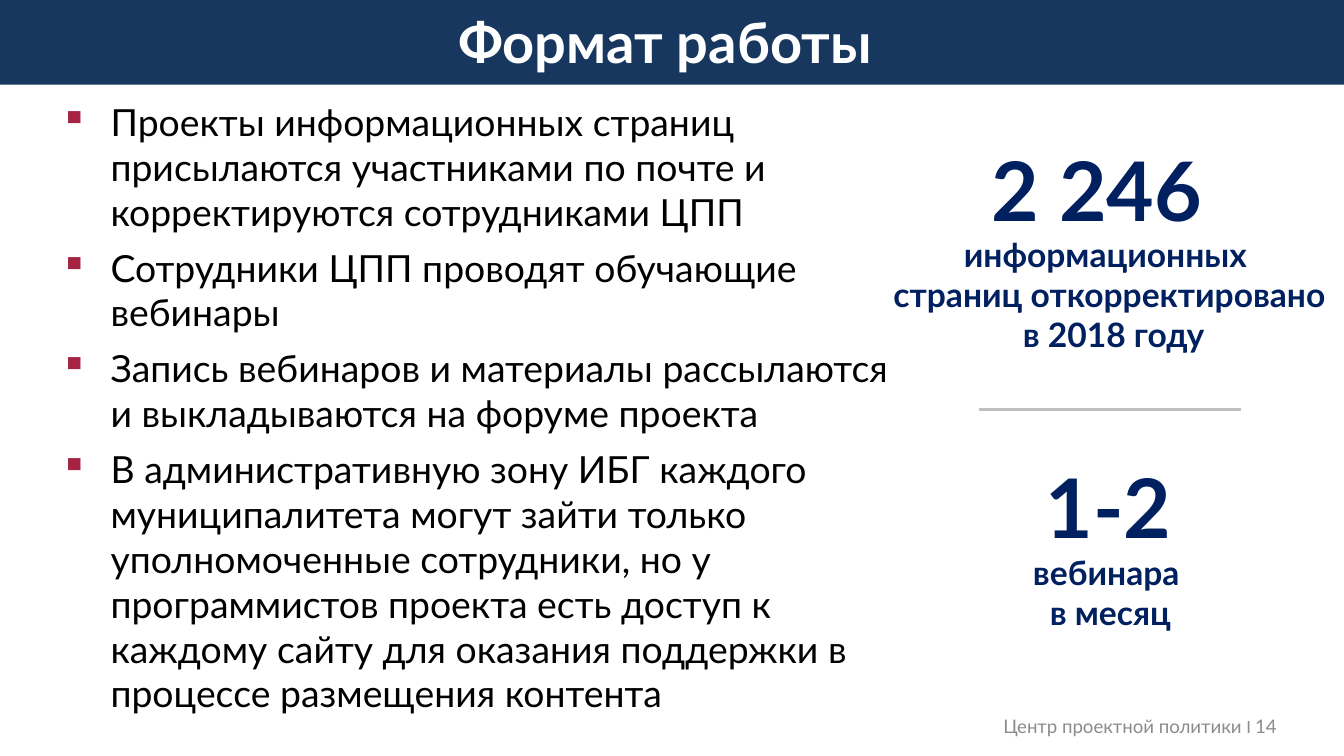
from dataclasses import dataclass

from lxml import etree
from pptx import Presentation
from pptx import util as u
from pptx.dml.color import RGBColor
from pptx.enum import shapes, text
from pptx.oxml import ns

WHITE = RGBColor(0xFF, 0xFF, 0xFF)
BLACK = RGBColor(0, 0, 0)
BANNER_BLUE = RGBColor(0x17, 0x37, 0x5E)
FIGURE_BLUE = RGBColor(0x00, 0x20, 0x60)
BULLET_RED = RGBColor(0xA6, 0x23, 0x41)
FOOTER_GRAY = RGBColor(0x8C, 0x8C, 0x8C)
DIVIDER_GRAY = RGBColor(0xBF, 0xBF, 0xBF)

CENTER = text.PP_ALIGN.CENTER
MIDDLE = text.MSO_ANCHOR.MIDDLE


@dataclass(frozen=True)
class Box:
    left: float
    top: float
    width: float
    height: float

    def lengths(self) -> tuple:
        return tuple(u.Cm(x) for x in (self.left, self.top, self.width, self.height))


@dataclass(frozen=True)
class Statistic:
    figure: str
    figure_box: Box
    caption: tuple[str, ...]
    caption_box: Box


BULLETS = (
    "Проекты информационных страниц присылаются участниками по почте и корректируются сотрудниками ЦПП",
    "Сотрудники ЦПП проводят обучающие вебинары",
    "Запись вебинаров и материалы рассылаются и выкладываются на форуме проекта",
    "В административную зону ИБГ каждого муниципалитета могут зайти только "
    "уполномоченные сотрудники, но у программистов проекта есть доступ к каждому "
    "сайту для оказания поддержки в процессе размещения контента",
)

STATISTICS = (
    Statistic(
        "2 246",
        Box(18.49, 2.51, 4.98, 2.13),
        ("информационных ", "страниц откорректировано", " в 2018 году"),
        Box(16.41, 4.29, 9.12, 2.57),
    ),
    Statistic(
        "1-2",
        Box(19.51, 8.51, 2.95, 2.13),
        ("вебинара ", "в месяц"),
        Box(19.13, 10.31, 3.71, 1.8),
    ),
)


def add_run(paragraph, content: str, *, size: float, color: RGBColor,
            bold: bool = False, font: str = "Lato"):
    run = paragraph.add_run()
    run.text = content
    run.font.name = font
    run.font.size = u.Pt(size)
    run.font.bold = bold
    run.font.color.rgb = color


def write_lines(frame, lines: tuple[str, ...], *, align=None, **style):
    for index, line in enumerate(lines):
        paragraph = frame.paragraphs[0] if index == 0 else frame.add_paragraph()
        paragraph.alignment = align
        add_run(paragraph, line, **style)


def add_text_frame(slide, box: Box, *, wrap: bool = True):
    frame = slide.shapes.add_textbox(*box.lengths()).text_frame
    frame.word_wrap = wrap
    if not wrap:
        frame.auto_size = text.MSO_AUTO_SIZE.SHAPE_TO_FIT_TEXT
    return frame


def add_banner(slide, title: str):
    shape = slide.shapes.add_shape(
        shapes.MSO_SHAPE.RECTANGLE, *Box(0, -0.05, 25.4, 1.65).lengths())
    shape.shadow.inherit = False
    shape.fill.solid()
    shape.fill.fore_color.rgb = BANNER_BLUE
    shape.line.fill.background()
    shape.text_frame.vertical_anchor = MIDDLE
    write_lines(shape.text_frame, (title,), align=CENTER, size=30, color=WHITE, bold=True)


def add_bullet(paragraph):
    paragraph.space_before = u.Pt(6)
    properties = paragraph._p.get_or_add_pPr()
    indent = u.Cm(0.95)
    properties.set("marL", str(indent))
    properties.set("indent", str(-indent))
    color = etree.SubElement(properties, ns.qn("a:buClr"))
    etree.SubElement(color, ns.qn("a:srgbClr"), val=str(BULLET_RED))
    etree.SubElement(properties, ns.qn("a:buChar"), char="▪")


def add_bullet_list(slide):
    frame = add_text_frame(slide, Box(0.89, 1.75, 16.48, 11.25))
    write_lines(frame, BULLETS, size=20, color=BLACK)
    for paragraph in frame.paragraphs:
        add_bullet(paragraph)


def add_statistic(slide, statistic: Statistic):
    figure = add_text_frame(slide, statistic.figure_box, wrap=False)
    write_lines(figure, (statistic.figure,), size=44, color=FIGURE_BLUE, bold=True)
    caption = add_text_frame(slide, statistic.caption_box, wrap=False)
    write_lines(caption, statistic.caption, align=CENTER, size=18, color=FIGURE_BLUE, bold=True)


def add_divider(slide):
    left, right, height = u.Cm(18.5), u.Cm(23.46), u.Cm(7.74)
    line = slide.shapes.add_connector(
        shapes.MSO_CONNECTOR.STRAIGHT, left, height, right, height)
    line.line.color.rgb = DIVIDER_GRAY
    line.line.width = u.Pt(1.5)
    etree.SubElement(line._element.spPr, ns.qn("a:effectLst"))


def add_footer(slide):
    frame = add_text_frame(slide, Box(17.09, 13.34, 7.04, 0.76))
    frame.margin_left = frame.margin_right = 0
    frame.vertical_anchor = MIDDLE
    paragraph = frame.paragraphs[0]
    paragraph.alignment = text.PP_ALIGN.RIGHT
    parts = (("Центр проектной политики ", "Lato"), ("I ", "Calibri"), ("14", "Lato"))
    for content, font in parts:
        add_run(paragraph, content, size=10, color=FOOTER_GRAY, font=font)


def main():
    presentation = Presentation()
    presentation.slide_width = u.Cm(25.4)
    presentation.slide_height = u.Cm(14.29)
    slide = presentation.slides.add_slide(presentation.slide_layouts[6])
    add_banner(slide, "Формат работы ")
    add_footer(slide)
    add_bullet_list(slide)
    for statistic in STATISTICS:
        add_statistic(slide, statistic)
    add_divider(slide)
    presentation.save("out.pptx")


if __name__ == "__main__":
    main()
